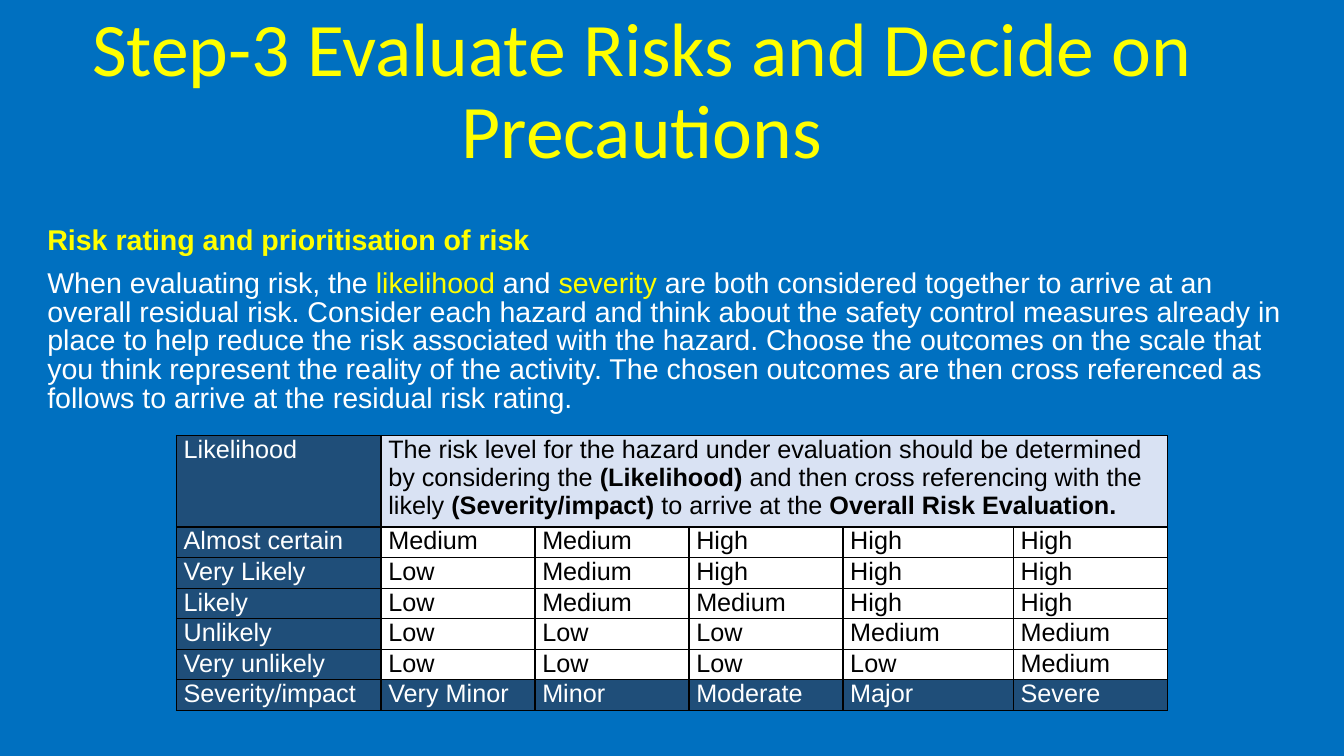
from lxml import etree
from pptx import Presentation
from pptx.dml.color import RGBColor
from pptx.enum.text import MSO_ANCHOR, MSO_AUTO_SIZE, PP_ALIGN
from pptx.oxml.ns import qn
from pptx.util import Pt

BOTTOM, CENTER = MSO_ANCHOR.BOTTOM, PP_ALIGN.CENTER
TOP, LEFT = MSO_ANCHOR.TOP, PP_ALIGN.LEFT
NO_FIT = MSO_AUTO_SIZE.NONE

BLUE = RGBColor(0x00, 0x70, 0xC0)
NAVY = RGBColor(0x1F, 0x4E, 0x79)
PALE = RGBColor(0xD9, 0xE2, 0xF3)
YELLOW = RGBColor(0xFF, 0xFF, 0x00)
WHITE = RGBColor(0xFF, 0xFF, 0xFF)
BLACK = RGBColor(0x00, 0x00, 0x00)

TITLE = "Step-3 Evaluate Risks and Decide on Precautions"
HEADING = "Risk rating and prioritisation of risk"
INTRO = [
    ("When evaluating risk, the ", WHITE),
    ("likelihood", YELLOW),
    (" and ", WHITE),
    ("severity", YELLOW),
    (" are both considered together to arrive at an overall residual risk. "
     "Consider each hazard and think about the safety control measures already "
     "in place to help reduce the risk associated with the hazard. Choose the "
     "outcomes on the scale that you think represent the reality of the "
     "activity. The chosen outcomes are then cross referenced as follows to "
     "arrive at the residual risk rating.", WHITE),
]
NOTE = [
    ("The risk level for the hazard under evaluation should be determined by "
     "considering the ", False),
    ("(Likelihood)", True),
    (" and then cross referencing with the likely ", False),
    ("(Severity/impact) ", True),
    ("to arrive at the ", False),
    ("Overall Risk Evaluation.", True),
]
RATINGS = [
    ("Almost certain", "Medium", "Medium", "High", "High", "High"),
    ("Very Likely", "Low", "Medium", "High", "High", "High"),
    ("Likely", "Low", "Medium", "Medium", "High", "High"),
    ("Unlikely", "Low", "Low", "Low", "Medium", "Medium"),
    ("Very unlikely", "Low", "Low", "Low", "Low", "Medium"),
    ("Severity/impact", "Very Minor", "Minor", "Moderate", "Major", "Severe"),
]
WIDTHS = [146.2, 110, 110, 110, 121.7, 110]
HEIGHTS = [65.5] + [21.84] * len(RATINGS)


class Deck:
    def __init__(self):
        self.prs = Presentation()
        self.prs.slide_width, self.prs.slide_height = Pt(960), Pt(540)
        self.slide = self.prs.slides.add_slide(self.prs.slide_layouts[1])
        fill = self.slide.background.fill
        fill.solid()
        fill.fore_color.rgb = BLUE

    def place(self, shape, x, y, w, h, anchor):
        shape.left, shape.top, shape.width, shape.height = map(Pt, (x, y, w, h))
        frame = shape.text_frame
        frame.word_wrap, frame.auto_size = True, NO_FIT
        frame.vertical_anchor = anchor
        return frame

    def style(self, par, size, face="Arial", color=None, bold=False):
        font = par.font
        font.size, font.name, font.bold = Pt(size), face, bold
        if color is not None:
            font.color.rgb = color

    def title(self, text, *box):
        frame = self.place(self.slide.shapes.title, *box, BOTTOM)
        par = frame.paragraphs[0]
        par.text, par.alignment, par.line_spacing = text, CENTER, 0.9
        self.style(par, 54, "Calibri", YELLOW)

    def body(self, head, parts, *box):
        frame = self.place(self.slide.placeholders[1], *box, TOP)
        frame.margin_top = Pt(40.7)
        first, second = frame.paragraphs[0], frame.add_paragraph()
        for par, gap in ((first, 0), (second, 10)):
            par.alignment, par.line_spacing = LEFT, 0.84
            par.space_before = Pt(gap)
            props = par._p.get_or_add_pPr()
            props.set("marL", "0")
            props.set("indent", "0")
            etree.SubElement(props, qn("a:buNone"))
        first.text = head
        self.style(first, 20.4, color=YELLOW, bold=True)
        self.style(second, 20.4)
        for text, color in parts:
            run = second.add_run()
            run.text, run.font.color.rgb = text, color

    def edge(self, cell):
        """Draw a thin black border on all four sides."""
        props = cell._tc.get_or_add_tcPr()
        for side in "LRTB":
            line = etree.SubElement(props, qn(f"a:ln{side}"), w=str(Pt(1)))
            fill = etree.SubElement(line, qn("a:solidFill"))
            etree.SubElement(fill, qn("a:srgbClr"), val=str(BLACK))

    def cell(self, cell, parts, back, color):
        self.edge(cell)
        cell.fill.solid()
        cell.fill.fore_color.rgb = back
        cell.margin_left = cell.margin_right = Pt(5.2)
        cell.margin_top = cell.margin_bottom = 0
        par = cell.text_frame.paragraphs[0]
        self.style(par, 18, color=color)
        for text, bold in parts:
            run = par.add_run()
            run.text = text
            if bold:
                run.font.bold = True

    def matrix(self, x, y):
        """Build the likelihood and severity grid."""
        frame = self.slide.shapes.add_table(
            len(HEIGHTS), len(WIDTHS), Pt(x), Pt(y),
            Pt(sum(WIDTHS)), Pt(sum(HEIGHTS)))
        table = frame.table
        table.first_row = table.horz_banding = False
        for col, width in zip(table.columns, WIDTHS):
            col.width = Pt(width)
        for row, height in zip(table.rows, HEIGHTS):
            row.height = Pt(height)
        table.cell(0, 1).merge(table.cell(0, len(WIDTHS) - 1))
        self.cell(table.cell(0, 0), [("Likelihood", False)], NAVY, WHITE)
        self.cell(table.cell(0, 1), NOTE, PALE, BLACK)
        for c in range(2, len(WIDTHS)):
            self.edge(table.cell(0, c))
        for r, row in enumerate(RATINGS, 1):
            for c, text in enumerate(row):
                label = c == 0 or r == len(RATINGS)
                back, color = (NAVY, WHITE) if label else (WHITE, BLACK)
                self.cell(table.cell(r, c), [(text, False)], back, color)


def main():
    deck = Deck()
    deck.title(TITLE, 44.6, 38.9, 828, 89.3)
    deck.body(HEADING, INTRO, 26.6, 121.7, 906.5, 196.6)
    deck.matrix(126, 311)
    deck.prs.save("out.pptx")


if __name__ == "__main__":
    main()
